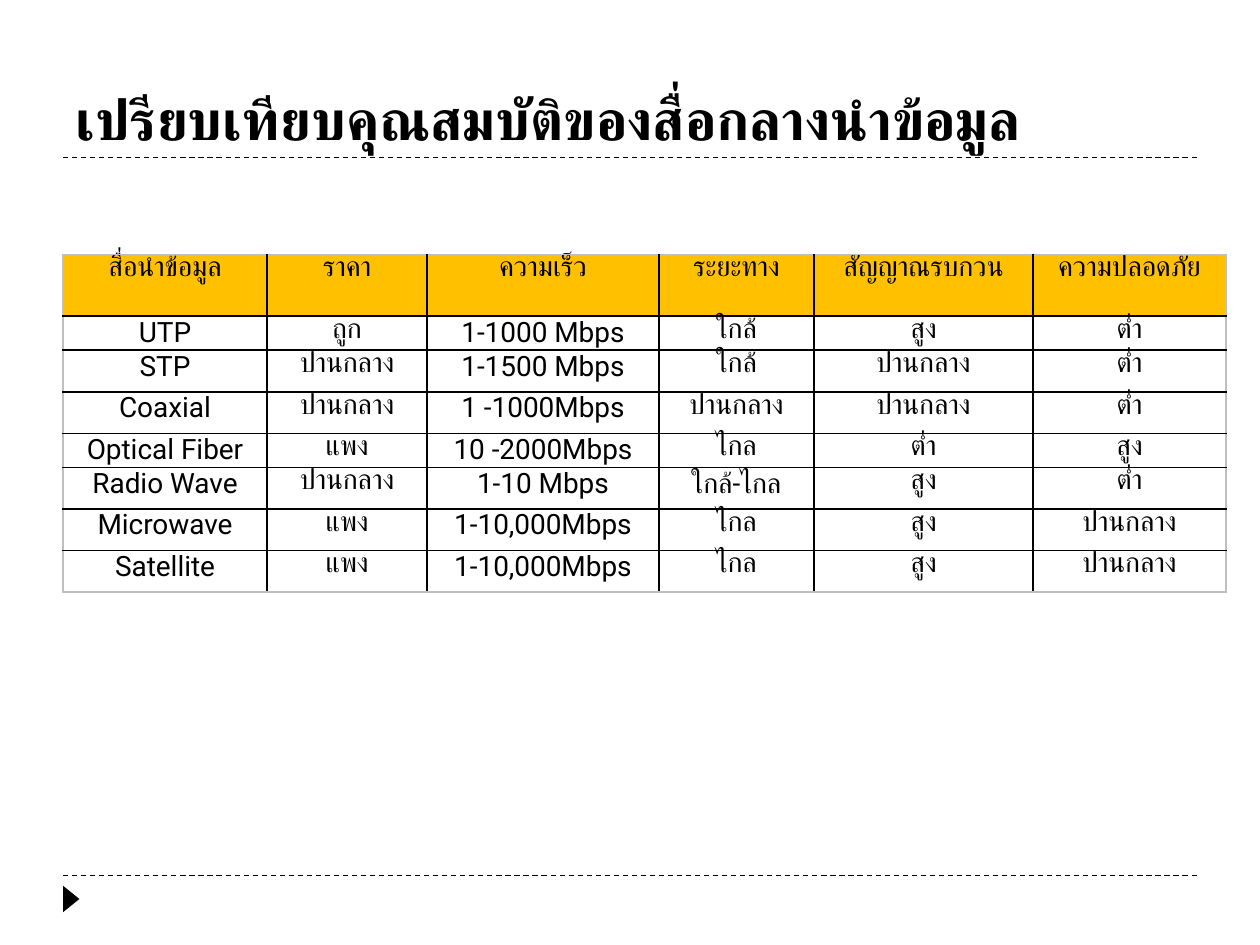
from dataclasses import dataclass

from lxml import etree
from pptx import Presentation
from pptx import util as u
from pptx.dml.color import RGBColor
from pptx.enum import dml, shapes, text
from pptx.oxml import ns


@dataclass(frozen=True)
class Theme:
    ink: str = "000000"
    header: str = "FFC000"
    frame: str = "BFBFBF"
    title_font: str = "Lato"
    body_font: str = "Roboto"
    title_size: float = 32
    body_size: float = 16
    rule_width: float = 0.75
    border_width: float = 1


class Page:
    """Places elements on a grid of 20 columns by 15 rows."""

    columns, rows = 20, 15

    def __init__(self, deck, theme):
        self.theme = theme
        self.slide = deck.slides.add_slide(deck.slide_layouts[6])
        self.column = deck.slide_width / self.columns
        self.row = deck.slide_height / self.rows

    def place(self, left, top, width, height):
        return (u.Emu(round(left * self.column)), u.Emu(round(top * self.row)),
                u.Emu(round(width * self.column)), u.Emu(round(height * self.row)))

    def add_span(self, para, words, font, size, bold=False):
        span = para.add_run()
        span.text = words
        span.font.name = font
        span.font.size = u.Pt(size)
        span.font.bold = bold
        span.font.color.rgb = RGBColor.from_string(self.theme.ink)

    def title(self, words, *area):
        box = self.slide.shapes.add_textbox(*self.place(*area))
        frame = box.text_frame
        frame.word_wrap = True
        frame.vertical_anchor = text.MSO_ANCHOR.BOTTOM
        self.add_span(frame.paragraphs[0], words, self.theme.title_font,
                      self.theme.title_size, bold=True)

    def dashed_rule(self, left, right, top):
        x1, y, x2, _ = self.place(left, top, right, 0)
        rule = self.slide.shapes.add_connector(shapes.MSO_CONNECTOR.STRAIGHT, x1, y, x2, y)
        rule.line.width = u.Pt(self.theme.rule_width)
        rule.line.color.rgb = RGBColor.from_string(self.theme.ink)
        rule.line.dash_style = dml.MSO_LINE.DASH
        etree.SubElement(rule.element.spPr, ns.qn("a:effectLst"))

    def right_pointer(self, *area):
        pointer = self.slide.shapes.add_shape(
            shapes.MSO_SHAPE.ISOSCELES_TRIANGLE, *self.place(*area))
        pointer.rotation = 90
        pointer.shadow.inherit = False
        pointer.fill.solid()
        pointer.fill.fore_color.rgb = RGBColor.from_string(self.theme.ink)
        pointer.line.fill.background()

    def border(self, cell, side, color):
        line = etree.SubElement(cell._tc.get_or_add_tcPr(), ns.qn(f"a:ln{side}"),
                                w=str(u.Pt(self.theme.border_width)))
        fill = etree.SubElement(line, ns.qn("a:solidFill"))
        etree.SubElement(fill, ns.qn("a:srgbClr"), val=color)

    def table(self, left, top, widths, heights, records):
        area = self.place(left, top, sum(widths), sum(heights))
        grid = self.slide.shapes.add_table(len(heights), len(widths), *area).table
        grid.first_row = grid.horz_banding = False
        for column, width in zip(grid.columns, widths):
            column.width = u.Emu(round(width * self.column))
        for row, height in zip(grid.rows, heights):
            row.height = u.Emu(round(height * self.row))
        last_row, last_column = len(heights) - 1, len(widths) - 1
        for i, record in enumerate(records):
            for j, words in enumerate(record):
                cell = grid.cell(i, j)
                outer = {"L": j == 0, "R": j == last_column,
                         "T": i == 0, "B": i == last_row}
                for side, on_frame in outer.items():
                    self.border(cell, side, self.theme.frame if on_frame else self.theme.ink)
                self.fill_cell(cell, words, is_header=i == 0)

    def fill_cell(self, cell, words, is_header):
        cell.margin_left = cell.margin_right = u.Inches(0.08)
        cell.margin_top = cell.margin_bottom = 0
        if is_header:
            cell.fill.solid()
            cell.fill.fore_color.rgb = RGBColor.from_string(self.theme.header)
        else:
            cell.fill.background()
        para = cell.text_frame.paragraphs[0]
        para.alignment = text.PP_ALIGN.CENTER
        self.add_span(para, words, self.theme.body_font, self.theme.body_size)


MEDIA = [
    ("สื่อนำข้อมูล", "ราคา", "ความเร็ว", "ระยะทาง", "สัญญาณรบกวน", "ความปลอดภัย"),
    ("UTP", "ถูก", "1-1000 Mbps", "ใกล้", "สูง", "ต่ำ"),
    ("STP", "ปานกลาง", "1-1500 Mbps", "ใกล้", "ปานกลาง", "ต่ำ"),
    ("Coaxial", "ปานกลาง", "1 -1000Mbps", "ปานกลาง", "ปานกลาง", "ต่ำ"),
    ("Optical Fiber", "แพง", "10 -2000Mbps", "ไกล", "ต่ำ", "สูง"),
    ("Radio Wave", "ปานกลาง", "1-10 Mbps", "ใกล้-ไกล", "สูง", "ต่ำ"),
    ("Microwave", "แพง", "1-10,000Mbps", "ไกล", "สูง", "ปานกลาง"),
    ("Satellite", "แพง", "1-10,000Mbps", "ไกล", "สูง", "ปานกลาง"),
]
COLUMN_WIDTHS = (3.24, 2.54, 3.68, 2.46, 3.48, 3.06)
TIGHT, LOOSE = 0.54, 0.66
ROW_HEIGHTS = (0.98, TIGHT, LOOSE, LOOSE, TIGHT, LOOSE, LOOSE, LOOSE)


def main():
    deck = Presentation()
    deck.slide_width, deck.slide_height = u.Inches(10), u.Inches(7.5)
    page = Page(deck, Theme())
    for top in (13.9, 2.5):
        page.dashed_rule(1, 19, top)
    page.right_pointer(0.92, 14.14, 0.42, 0.26)
    page.title("เปรียบเทียบคุณสมบัติของสื่อกลางนำข้อมูล", 1, 0.34, 18, 2.16)
    page.table(1, 4.04, COLUMN_WIDTHS, ROW_HEIGHTS, MEDIA)
    deck.save("out.pptx")


if __name__ == "__main__":
    main()
